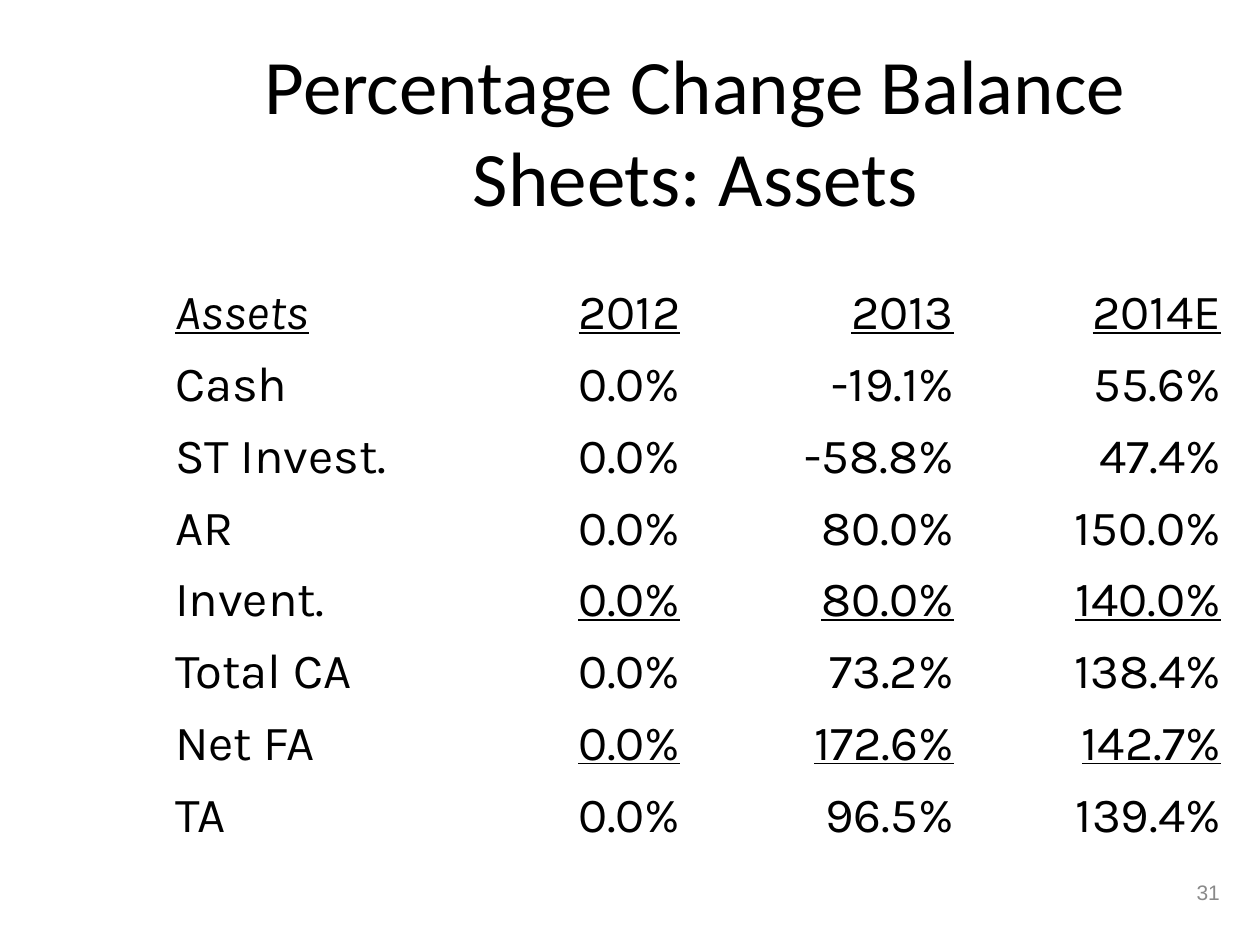
from pptx import Presentation
from pptx.dml.color import RGBColor
from pptx.enum.text import MSO_ANCHOR, PP_ALIGN
from pptx.util import Inches, Pt

TITLE = "Percentage Change Balance Sheets: Assets"
PAGE = "31"
ROWS = [
    ("Assets", "2012", "2013", "2014E"),
    ("Cash", "0.0%", "-19.1%", "55.6%"),
    ("ST Invest.", "0.0%", "-58.8%", "47.4%"),
    ("AR", "0.0%", "80.0%", "150.0%"),
    ("Invent.", "0.0%", "80.0%", "140.0%"),
    ("Total CA", "0.0%", "73.2%", "138.4%"),
    ("Net FA", "0.0%", "172.6%", "142.7%"),
    ("TA", "0.0%", "96.5%", "139.4%"),
]
RULED = {"Assets", "Invent.", "Net FA"}  # rows with underlined figures
WIDTHS = (2.13, 2.08, 2.17, 2.12)
ROW_H = 0.57

# role: font, size, colour
THEME = {
    "title": ("Calibri", 44, "000000"),
    "table": ("Karla", 28, "000000"),
    "page": ("Arial", 12, "898989"),
}


def write(frame, text, role, align):
    """Fill a frame with one styled paragraph and return its font."""
    frame.text = text
    para = frame.paragraphs[0]
    para.alignment = align
    font = para.runs[0].font
    name, size, color = THEME[role]
    font.name, font.size = name, Pt(size)
    font.color.rgb = RGBColor.from_string(color)
    font.bold = False
    return font


def add_title(slide):
    title = slide.shapes.title
    title.left, title.top = Inches(1.26), Inches(0.23)
    title.width, title.height = Inches(8.52), Inches(1.6)
    title.text_frame.vertical_anchor = MSO_ANCHOR.MIDDLE
    write(title.text_frame, TITLE, "title", PP_ALIGN.CENTER)


def add_sheet(slide):
    table = slide.shapes.add_table(
        len(ROWS), len(WIDTHS), Inches(1.29), Inches(2.21),
        Inches(sum(WIDTHS)), Inches(ROW_H * len(ROWS))).table
    table.first_row = table.horz_banding = False
    for col, width in zip(table.columns, WIDTHS):
        col.width = Inches(width)
    for r, row in enumerate(ROWS):
        table.rows[r].height = Inches(ROW_H)
        for c, text in enumerate(row):
            cell = table.cell(r, c)
            cell.fill.background()
            align = PP_ALIGN.RIGHT if c else PP_ALIGN.LEFT
            font = write(cell.text_frame, text, "table", align)
            head = r == 0
            font.italic = head and c == 0
            font.underline = row[0] in RULED and (head or c > 0)


def add_page(slide):
    box = slide.shapes.add_textbox(
        Inches(7.7), Inches(6.83), Inches(2.08), Inches(0.5))
    box.text_frame.word_wrap = True
    box.text_frame.vertical_anchor = MSO_ANCHOR.MIDDLE
    write(box.text_frame, PAGE, "page", PP_ALIGN.RIGHT)


def main():
    deck = Presentation()
    deck.slide_width, deck.slide_height = Inches(10), Inches(7.5)
    slide = deck.slides.add_slide(deck.slide_layouts[5])
    add_title(slide)
    add_sheet(slide)
    add_page(slide)
    deck.save("out.pptx")


if __name__ == "__main__":
    main()
